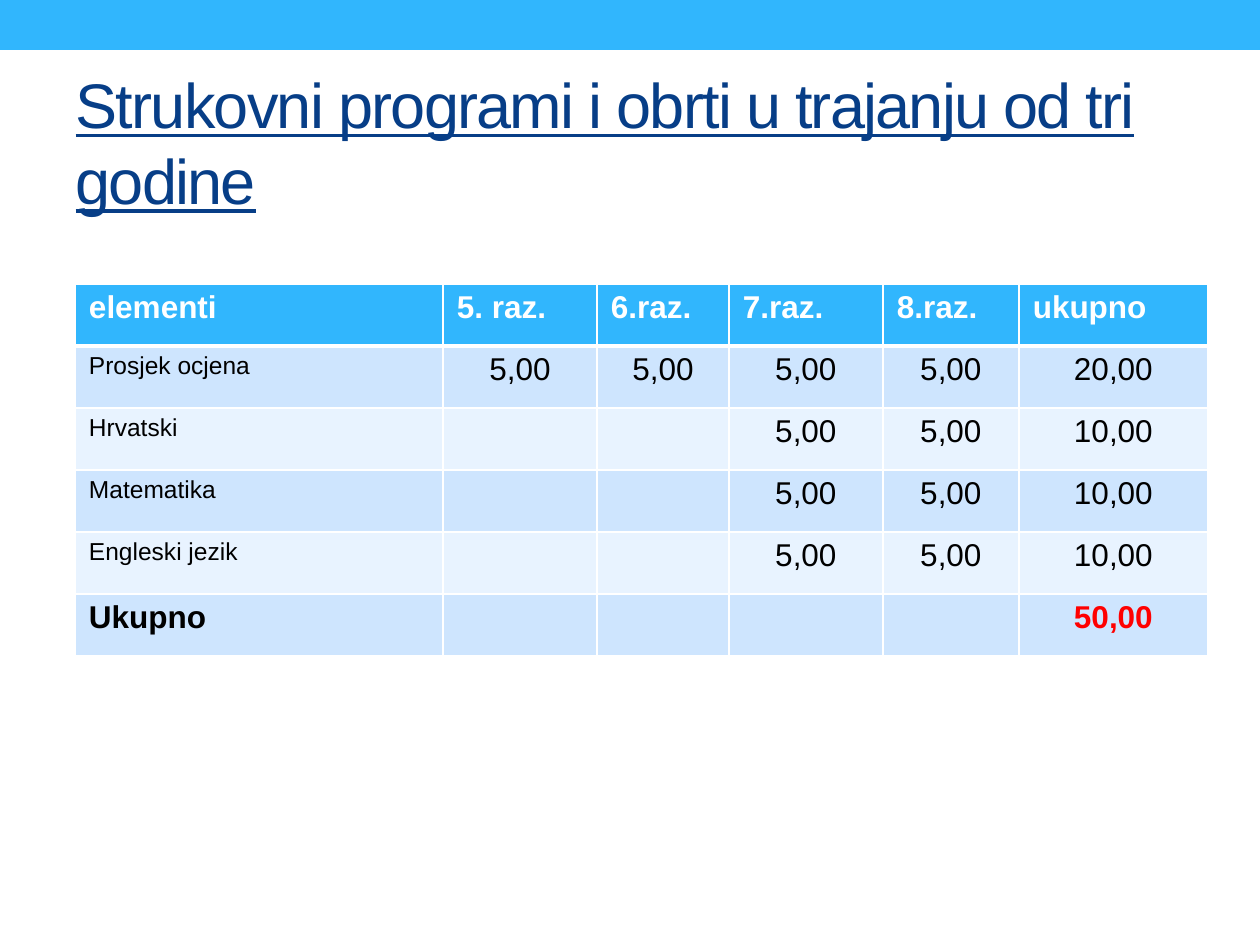
from lxml import etree
from pptx import Presentation
from pptx import util as u
from pptx.dml.color import RGBColor
from pptx.enum import shapes, text
from pptx.oxml import ns

SCALE = 914400 / 126
FONT = "Arial"
COLOURS = {
    "sky": "31B6FD",
    "navy": "073E87",
    "odd": "CEE5FE",
    "even": "E8F3FF",
    "white": "FFFFFF",
    "black": "000000",
    "red": "FF0000",
}
COLUMN_WIDTHS = [368, 154, 132, 154, 136, 189]
ROW_HEIGHT = 62
GRADES = [
    ["elementi", "5. raz.", "6.raz.", "7.raz.", "8.raz.", "ukupno"],
    ["Prosjek ocjena", "5,00", "5,00", "5,00", "5,00", "20,00"],
    ["Hrvatski", "", "", "5,00", "5,00", "10,00"],
    ["Matematika", "", "", "5,00", "5,00", "10,00"],
    ["Engleski jezik", "", "", "5,00", "5,00", "10,00"],
    ["Ukupno", "", "", "", "", "50,00"],
]


def px(length):
    return u.Emu(round(length * SCALE))


def colour(name):
    return RGBColor.from_string(COLOURS[name])


def format_runs(paragraph, size, name, bold=False):
    for run in paragraph.runs:
        run.font.name = FONT
        run.font.size = u.Pt(size)
        run.font.bold = bold
        run.font.color.rgb = colour(name)


def add_band(slide):
    band = slide.shapes.add_shape(
        shapes.MSO_SHAPE.RECTANGLE, 0, 0, px(1260), px(50))
    band.shadow.inherit = False
    band.fill.solid()
    band.fill.fore_color.rgb = colour("sky")
    band.line.fill.background()


def set_title(slide, wording):
    title = slide.shapes.title
    title.left, title.top, title.width, title.height = map(px, (63, 73, 1134, 136))
    frame = title.text_frame
    frame.text = wording
    frame.word_wrap = True
    frame.auto_size = text.MSO_AUTO_SIZE.NONE
    frame.vertical_anchor = text.MSO_ANCHOR.MIDDLE
    heading = frame.paragraphs[0]
    heading.alignment = text.PP_ALIGN.LEFT
    format_runs(heading, 36, "navy")
    for run in heading.runs:
        run.font.underline = True
        run.font._element.set("spc", "-100")


def set_borders(cell, row):
    widths = {"L": 1, "R": 1, "T": 3 if row == 1 else 1, "B": 3 if row == 0 else 1}
    properties = cell._tc.get_or_add_tcPr()
    for side, width in widths.items():
        border = etree.SubElement(
            properties, ns.qn(f"a:ln{side}"), w=str(u.Pt(width)))
        fill = etree.SubElement(border, ns.qn("a:solidFill"))
        etree.SubElement(fill, ns.qn("a:srgbClr"), val=COLOURS["white"])


def format_cell(cell, row, column):
    header, total = row == 0, row == len(GRADES) - 1
    set_borders(cell, row)
    cell.fill.solid()
    cell.fill.fore_color.rgb = colour(
        "sky" if header else "odd" if row % 2 else "even")
    cell.margin_left = cell.margin_right = px(14)
    cell.margin_top = cell.margin_bottom = px(6)
    entry = cell.text_frame.paragraphs[0]
    if column and not header:
        entry.alignment = text.PP_ALIGN.CENTER
    subject = column == 0 and not header and not total
    ink = "white" if header else "red" if total and column else "black"
    format_runs(entry, 14 if subject else 18, ink, header or total)


def add_grades(slide):
    grades = slide.shapes.add_table(
        len(GRADES), len(COLUMN_WIDTHS), px(75), px(284),
        px(sum(COLUMN_WIDTHS)), px(ROW_HEIGHT * len(GRADES))).table
    for column, width in zip(grades.columns, COLUMN_WIDTHS):
        column.width = px(width)
    for row, entries in enumerate(GRADES):
        grades.rows[row].height = px(ROW_HEIGHT)
        for column, entry in enumerate(entries):
            cell = grades.cell(row, column)
            cell.text_frame.text = entry
            format_cell(cell, row, column)


def main():
    deck = Presentation()
    deck.slide_width, deck.slide_height = px(1260), px(945)
    slide = deck.slides.add_slide(deck.slide_layouts[5])
    add_band(slide)
    set_title(slide, "Strukovni programi i obrti u trajanju od tri godine")
    add_grades(slide)
    deck.save("out.pptx")


if __name__ == "__main__":
    main()
